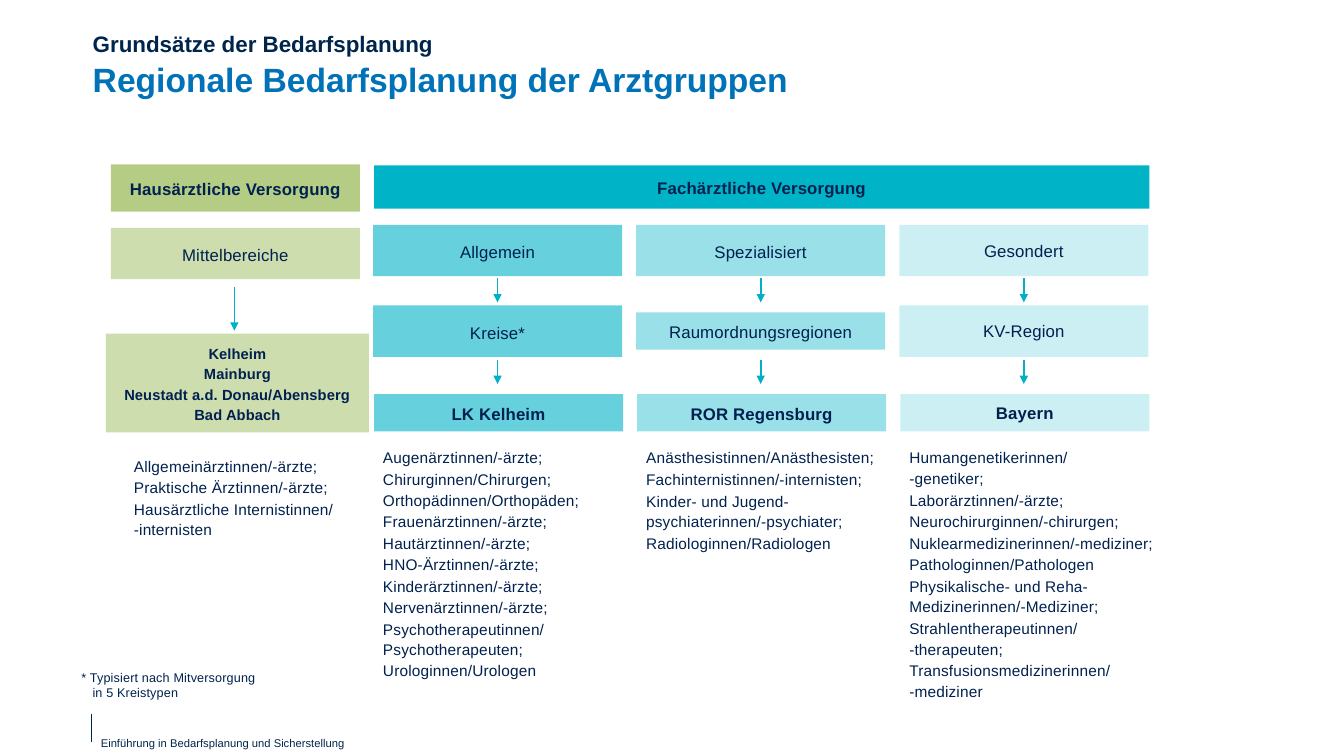
from copy import deepcopy

from pptx import Presentation
from pptx.dml.color import RGBColor
from pptx.enum.shapes import MSO_CONNECTOR, MSO_SHAPE
from pptx.enum.text import MSO_ANCHOR, PP_ALIGN
from pptx.oxml.ns import qn
from pptx.util import Inches, Pt
from lxml.etree import SubElement

NAVY = RGBColor(0x00, 0x25, 0x4D)
INK = RGBColor(0x00, 0x21, 0x4F)
BLUE = RGBColor(0x00, 0x72, 0xB7)
GREEN = RGBColor(0x84, 0xAB, 0x35)
TEAL = RGBColor(0x01, 0xB3, 0xC7)
ARROW = RGBColor(0x01, 0xAF, 0xC6)

LEFT, STEP, WIDE = 1.09, 2.61, 2.47
HEAD, LEVEL, UNIT, REGION, LIST = 1.64, 2.23, 3.03, 3.91, 4.38
TALL, LOW = 0.51, 0.37
LOOSE = 1.12

# Level, unit, unit height, region, opacity, line spacing, doctors
GROUPS = [
    ("Allgemein", "Kreise*", TALL, "LK Kelheim", 60, LOOSE, [
        "Augenärztinnen/-ärzte;",
        "Chirurginnen/Chirurgen; Orthopädinnen/Orthopäden;",
        "Frauenärztinnen/-ärzte;",
        "Hautärztinnen/-ärzte;",
        "HNO-Ärztinnen/-ärzte;",
        "Kinderärztinnen/-ärzte;",
        "Nervenärztinnen/-ärzte;",
        "Psychotherapeutinnen/\nPsychotherapeuten;\nUrologinnen/Urologen"]),
    ("Spezialisiert", "Raumordnungsregionen", LOW, "ROR Regensburg", 40, LOOSE, [
        "Anästhesistinnen/Anästhesisten;",
        "Fachinternistinnen/-internisten;",
        "Kinder- und Jugend-\npsychiaterinnen/-psychiater;",
        "Radiologinnen/Radiologen"]),
    ("Gesondert", "KV-Region", TALL, "Bayern", 20, 1, [
        "Humangenetikerinnen/\n-genetiker;",
        "Laborärztinnen/-ärzte;",
        "Neurochirurginnen/-chirurgen;",
        "Nuklearmedizinerinnen/-mediziner;",
        "Pathologinnen/Pathologen",
        "Physikalische- und Reha-Medizinerinnen/-Mediziner;",
        "Strahlentherapeutinnen/\n-therapeuten;",
        "Transfusionsmedizinerinnen/\n-mediziner"]),
]
TOWNS = ["Kelheim", "Mainburg", "Neustadt a.d. Donau/Abensberg", "Bad Abbach"]
FAMILY = [
    "Allgemeinärztinnen/-ärzte;",
    "Praktische Ärztinnen/-ärzte;",
    "Hausärztliche Internistinnen/\n-internisten"]


def col(num):
    return LEFT + num * STEP


def write(frame, paras, size, color=INK, bold=False, gap=1, align=PP_ALIGN.LEFT, track=10):
    """Fill a frame; track is letter spacing in hundredths of a point."""
    frame.word_wrap = True
    for num, text in enumerate(paras):
        para = frame.add_paragraph() if num else frame.paragraphs[0]
        para.text = text
        para.alignment = align
        para.line_spacing = gap
        para.space_before = Pt(0.6 if num else 0)
        for run in para.runs:
            font = run.font
            font.name, font.size, font.bold = "Arial", Pt(size), bold
            font.color.rgb = color
            run._r.get_or_add_rPr().set("spc", str(track))
        for stop in para._p.findall(qn("a:br")):
            stop.insert(0, deepcopy(para.runs[0]._r.rPr))


def pad(frame, left, top, right, base):
    frame.margin_left, frame.margin_right = Inches(left), Inches(right)
    frame.margin_top, frame.margin_bottom = Inches(top), Inches(base)


def label(slide, x, y, w, h, paras, size, **style):
    area = slide.shapes.add_textbox(Inches(x), Inches(y), Inches(w), Inches(h))
    write(area.text_frame, paras, size, **style)
    return area.text_frame


def box(slide, x, y, w, h, paras, fill, alpha, size=12, bold=False, gap=LOOSE):
    rect = slide.shapes.add_shape(
        MSO_SHAPE.RECTANGLE, Inches(x), Inches(y), Inches(w), Inches(h))
    rect.shadow.inherit = False
    rect.line.fill.background()
    rect.fill.solid()
    rect.fill.fore_color.rgb = fill
    if alpha < 100:
        tone = rect._element.spPr.find(qn("a:solidFill"))[0]
        SubElement(tone, qn("a:alpha")).set("val", str(alpha * 1000))
    frame = rect.text_frame
    frame.vertical_anchor = MSO_ANCHOR.MIDDLE
    pad(frame, 0.16, 0.08, 0.16, 0.08)
    write(frame, paras, size, bold=bold, gap=gap, align=PP_ALIGN.CENTER)


def rule(slide, x, top, base, color, width):
    line = slide.shapes.add_connector(
        MSO_CONNECTOR.STRAIGHT, Inches(x), Inches(top), Inches(x), Inches(base))
    line.line.color.rgb = color
    line.line.width = Pt(width)
    SubElement(line._element.spPr, qn("a:effectLst"))
    return line


def arrow(slide, x, top, base):
    line = rule(slide, x, top, base, ARROW, 1.25)
    SubElement(line.line._get_or_add_ln(), qn("a:tailEnd")).set("type", "triangle")


def frame_page(slide):
    """Draw the headings, the footnote and the footer."""
    rule(slide, 0.91, 7.08, 7.36, NAVY, 0.75)
    title = label(slide, 0.92, 0.63, 9.53, 0.74, ["Regionale Bedarfsplanung der Arztgruppen"],
                  24, color=BLUE, bold=True, gap=0.9, track=0)
    topic = label(slide, 0.92, 0.3, 9.53, 0.31, ["Grundsätze der Bedarfsplanung"],
                  16, color=NAVY, bold=True, track=0)
    for frame in (title, topic):
        pad(frame, 0, 0, 0, 0)
    foot = label(slide, 0.92, 7.3, 6.26, 0.14,
                 ["Einführung in Bedarfsplanung und Sicherstellung"], 8, color=NAVY, track=0)
    foot.vertical_anchor = MSO_ANCHOR.BOTTOM
    pad(foot, 0.08, 0, 0, 0)
    note = label(slide, 0.71, 6.6, 6.67, 0.4,
                 ["* Typisiert nach Mitversorgung\nin 5 Kreistypen"], 9)
    props = note.paragraphs[0]._p.get_or_add_pPr()
    props.set("marL", str(Inches(0.11)))
    props.set("indent", str(-Inches(0.11)))


def family(slide):
    """Draw the column of general practice."""
    x = col(0)
    box(slide, x + 0.01, 1.63, WIDE, 0.47, ["Hausärztliche Versorgung"], GREEN, 60, bold=True)
    box(slide, x + 0.01, 2.26, WIDE, TALL, ["Mittelbereiche"], GREEN, 40)
    arrow(slide, x + WIDE / 2, 2.85, 3.28)
    box(slide, 1.05, 3.31, 2.61, 0.98, TOWNS, GREEN, 40, size=10.5, bold=True)
    label(slide, 1.23, 4.46, WIDE, 1.16, FAMILY, 11, gap=LOOSE)


def special(slide):
    """Draw the three columns of specialist care."""
    box(slide, col(1) + 0.01, HEAD, 2 * STEP + WIDE, 0.43,
        ["Fachärztliche Versorgung"], TEAL, 100, bold=True)
    for num, (level, unit, high, region, alpha, gap, docs) in enumerate(GROUPS, 1):
        x = col(num)
        box(slide, x, LEVEL, WIDE, TALL, [level], TEAL, alpha, gap=gap)
        box(slide, x, UNIT + (TALL - high) / 2, WIDE, high, [unit], TEAL, alpha, gap=gap)
        box(slide, x + 0.01, REGION, WIDE, LOW, [region], TEAL, alpha, bold=True, gap=gap)
        for top in (2.76, 3.57):
            arrow(slide, x + WIDE / 2, top, top + 0.24)
        label(slide, x, LIST, 2.83 if num == 3 else 2.51, 2.46, docs, 11, gap=LOOSE)


def main():
    deck = Presentation()
    deck.slide_width, deck.slide_height = Inches(13.33), Inches(7.5)
    slide = deck.slides.add_slide(deck.slide_layouts[6])
    frame_page(slide)
    family(slide)
    special(slide)
    deck.save("out.pptx")


if __name__ == "__main__":
    main()
